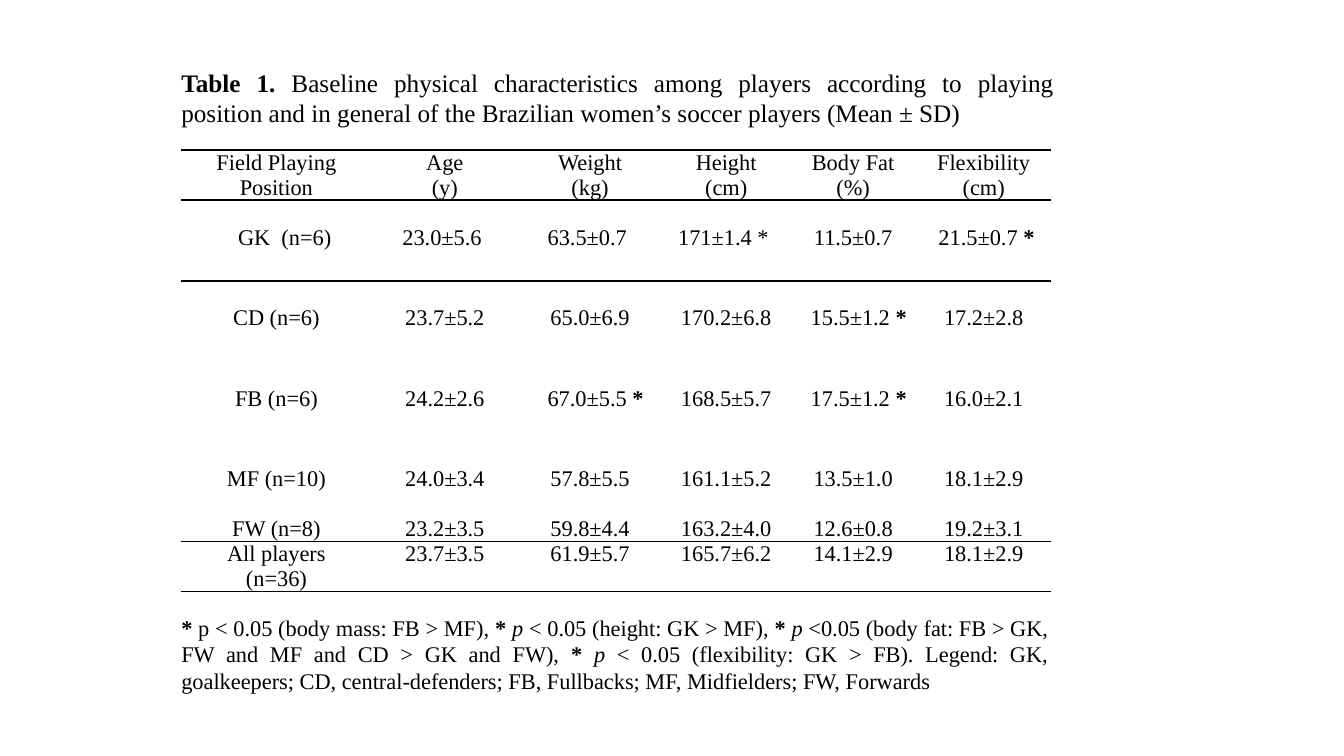
from lxml import etree
from pptx import Presentation
from pptx.dml.color import RGBColor
from pptx.enum.text import MSO_ANCHOR, MSO_AUTO_SIZE, PP_ALIGN
from pptx.oxml.ns import qn
from pptx.util import Cm, Pt

FONT = "Times New Roman"
BLACK = RGBColor(0, 0, 0)
WHITE = RGBColor(255, 255, 255)
NO_STYLE = "{2D5ABB26-0587-4C30-8999-92F81FD0307C}"

# Content: rich text is a list of (text, style), style "b" bold, "i" italic
STAR = ("*", "b")
TITLE = [
    ("Table 1.", "b"),
    (" Baseline physical characteristics among players according to playing "
     "position and in general of the Brazilian women’s soccer players (Mean ± SD)", ""),
]
FOOTNOTE = [
    ("* ", "b"), ("p < 0.05 (body mass: FB > MF),", ""),
    (" * ", "b"), ("p", "i"), (" < 0.05 (height: GK > MF), ", ""),
    ("* ", "b"), ("p", "i"),
    (" <0.05 (body fat: FB > GK, FW and MF and CD > GK and FW), ", ""),
    ("* ", "b"), ("p", "i"),
    (" < 0.05 (flexibility: GK > FB). Legend: GK, goalkeepers; CD, central-defenders; "
     "FB, Fullbacks; MF, Midfielders; FW, Forwards", ""),
]
ROWS = [
    ["Field Playing\nPosition", "Age\n(y)", "Weight\n(kg)", "Height\n(cm)",
     "Body Fat\n(%)", "Flexibility\n(cm)"],
    ["GK  (n=6)", "23.0±5.6", "63.5±0.7", "171±1.4 *", "11.5±0.7", [("21.5±0.7 ", ""), STAR]],
    ["CD (n=6)", "23.7±5.2", "65.0±6.9", "170.2±6.8", [("15.5±1.2 ", ""), STAR], "17.2±2.8"],
    ["FB (n=6)", "24.2±2.6", [("67.0±5.5 ", ""), STAR], "168.5±5.7",
     [("17.5±1.2 ", ""), STAR], "16.0±2.1"],
    ["MF (n=10)", "24.0±3.4", "57.8±5.5", "161.1±5.2", "13.5±1.0", "18.1±2.9"],
    ["FW (n=8)", "23.2±3.5", "59.8±4.4", "163.2±4.0", "12.6±0.8", "19.2±3.1"],
    ["All players\n(n=36)", "23.7±3.5", "61.9±5.7", "165.7±6.2", "14.1±2.9", "18.1±2.9"],
]
COL_WIDTHS = [4.83, 3.66, 3.66, 3.2, 3.2, 3.38]
ROW_HEIGHTS = [1.02, 2.03, 2.03, 2.03, 1.02, 1.02, 1.02]
LAST = len(ROWS) - 1

# Off-centre cells (row, column): extra inset in cm, left if positive, right if negative
INSETS = {(1, 0): 0.42, (1, 1): -0.14, (1, 2): -0.14, (1, 3): -0.14, (1, 5): 0.14,
          (2, 4): 0.28, (3, 2): 0.28, (3, 4): 0.28}

# Rules: row -> [(edge, width in points)]
RULES = {0: [("T", 1.5), ("B", 1.5)], 1: [("T", 1.5)],
         LAST - 1: [("B", 1)], LAST: [("T", 1), ("B", 1)]}


def write(p, runs, size, align):
    p.alignment = align
    p.font.name, p.font.size, p.font.color.rgb = FONT, Pt(size), BLACK
    for text, style in runs:
        r = p.add_run()
        r.text = text
        r.font.name, r.font.size, r.font.color.rgb = FONT, Pt(size), BLACK
        r.font.bold = style == "b"
        r.font.italic = style == "i"


def add_text(s, left, top, width, height, runs, size, anchor):
    tf = s.shapes.add_textbox(Cm(left), Cm(top), Cm(width), Cm(height)).text_frame
    tf.word_wrap = True
    tf.auto_size = MSO_AUTO_SIZE.SHAPE_TO_FIT_TEXT
    tf.vertical_anchor = anchor
    write(tf.paragraphs[0], runs, size, PP_ALIGN.JUSTIFY)


def add_rules(cell, rules):
    tc_pr = cell._tc.get_or_add_tcPr()
    for i, (edge, width) in enumerate(rules):
        ln = etree.Element(qn("a:ln" + edge), w=str(Pt(width)))
        fill = etree.SubElement(ln, qn("a:solidFill"))
        etree.SubElement(fill, qn("a:srgbClr"), val=str(BLACK))
        tc_pr.insert(i, ln)


def fill_cell(cell, row, col, content):
    inset = INSETS.get((row, col), 0)
    cell.margin_left = Cm(0.18 + max(inset, 0))
    cell.margin_right = Cm(0.18 + max(-inset, 0))
    cell.margin_top = cell.margin_bottom = 0
    is_body = 0 < row < LAST
    if is_body:
        cell.fill.solid()
        cell.fill.fore_color.rgb = WHITE
    else:
        cell.fill.background()
    lines = [[(t, "")] for t in content.split("\n")] if isinstance(content, str) else [content]
    tf = cell.text_frame
    for i, runs in enumerate(lines):
        p = tf.add_paragraph() if i else tf.paragraphs[0]
        write(p, runs, 16, PP_ALIGN.CENTER)
        if is_body:
            p.line_spacing = 2.0
    add_rules(cell, RULES.get(row, []))


prs = Presentation()
prs.slide_width, prs.slide_height = Cm(33.87), Cm(19.05)
s = prs.slides.add_slide(prs.slide_layouts[6])

# Table
table = s.shapes.add_table(len(ROWS), len(COL_WIDTHS), Cm(4.55), Cm(3.79),
                           Cm(sum(COL_WIDTHS)), Cm(sum(ROW_HEIGHTS))).table
table.first_row = table.horz_banding = False
table._tbl.tblPr.find(qn("a:tableStyleId")).text = NO_STYLE
for column, width in zip(table.columns, COL_WIDTHS):
    column.width = Cm(width)
for row, height in enumerate(ROW_HEIGHTS):
    table.rows[row].height = Cm(height)
    for col, content in enumerate(ROWS[row]):
        fill_cell(table.cell(row, col), row, col, content)

# Title and footnote
add_text(s, 4.32, 1.55, 22.5, 1.8, TITLE, 18, MSO_ANCHOR.MIDDLE)
add_text(s, 4.32, 15.34, 22.35, 2.31, FOOTNOTE, 16, MSO_ANCHOR.TOP)

prs.save("out.pptx")
